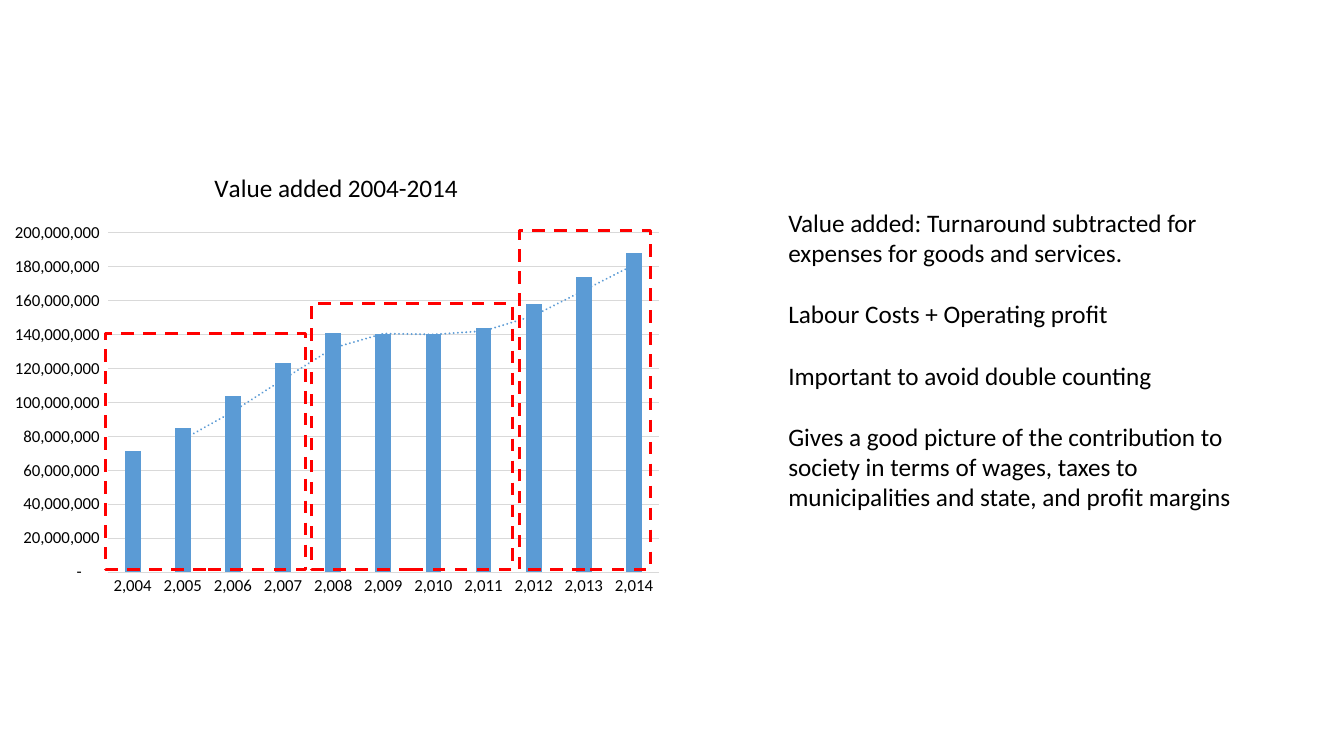
from lxml import etree
from pptx import Presentation
from pptx.chart.data import CategoryChartData
from pptx.dml.color import RGBColor
from pptx.enum import chart as ch, dml, shapes, text
from pptx.oxml.ns import qn
from pptx.util import Inches, Pt

BLACK = RGBColor(0x00, 0x00, 0x00)
WHITE = RGBColor(0xFF, 0xFF, 0xFF)
BLUE = RGBColor(0x5B, 0x9B, 0xD5)
GRID_GREY = RGBColor(0xD9, 0xD9, 0xD9)
RED = RGBColor(0xFF, 0x00, 0x00)
FONT = "Calibri"
CHART_NS = "http://schemas.openxmlformats.org/drawingml/2006/chart"
DRAWING_NS = "http://schemas.openxmlformats.org/drawingml/2006/main"

YEARS = range(2004, 2015)
VALUE_ADDED_MILLIONS = (71, 85, 104, 123, 141, 140, 140, 144, 158, 174, 188)
NUMBER_FORMAT = r'_ * #,##0_ ;_ * \-#,##0_ ;_ * "-"??_ ;_ '
PERIOD_FRAMES = (
    (1.05, 3.31, 1.98),
    (3.09, 3.01, 1.99),
    (5.15, 2.29, 1.3),
)
FRAME_BOTTOM = 5.65
EXPLANATIONS = (
    "Value added: Turnaround subtracted for expenses for goods and services.",
    "Labour Costs + Operating profit",
    "Important to avoid double counting",
    "Gives a good picture of the contribution to society in terms of wages, "
    "taxes to municipalities and state, and profit margins",
)


def format_font(font, size, color=BLACK, bold=False):
    font.name = FONT
    font.size = Pt(size)
    font.bold = bold
    font.color.rgb = color


def write_text(frame, paragraphs, size=18, color=BLACK, gap=0, align=None):
    for index, content in enumerate(paragraphs):
        paragraph = frame.add_paragraph() if index else frame.paragraphs[0]
        paragraph.alignment = align
        if index:
            paragraph.space_before = Pt(gap)
        run = paragraph.add_run()
        run.text = content
        format_font(run.font, size, color)


def format_line(line, color, width, dash=None):
    line.color.rgb = color
    line.width = Pt(width)
    if dash:
        line.dash_style = dash


def add_moving_average(series):
    trendline = etree.fromstring(
        f'<c:trendline xmlns:c="{CHART_NS}" xmlns:a="{DRAWING_NS}">'
        '<c:spPr><a:ln w="19050" cap="rnd"><a:solidFill>'
        f'<a:srgbClr val="{BLUE}"/></a:solidFill><a:prstDash val="sysDot"/>'
        '</a:ln></c:spPr><c:trendlineType val="movingAvg"/>'
        '<c:period val="2"/><c:dispRSqr val="0"/><c:dispEq val="0"/>'
        '</c:trendline>'
    )
    series._element.find(qn("c:cat")).addprevious(trendline)


def place_plot(chart, left, top, width, height):
    plot_area = chart._chartSpace.chart.plotArea
    for layout in plot_area.findall(qn("c:layout")):
        plot_area.remove(layout)
    layout = etree.Element(qn("c:layout"))
    manual = etree.SubElement(layout, qn("c:manualLayout"))
    settings = (("layoutTarget", "inner"), ("xMode", "edge"), ("yMode", "edge"),
                ("x", left), ("y", top), ("w", width), ("h", height))
    for name, value in settings:
        etree.SubElement(manual, qn(f"c:{name}")).set("val", str(value))
    plot_area.insert(0, layout)


def format_axes(chart):
    for axis in (chart.category_axis, chart.value_axis):
        axis.major_tick_mark = ch.XL_TICK_MARK.NONE
        axis.minor_tick_mark = ch.XL_TICK_MARK.NONE
        format_font(axis.tick_labels.font, 12)
    format_line(chart.category_axis.format.line, GRID_GREY, 0.75)
    value_axis = chart.value_axis
    value_axis.minimum_scale = 0
    value_axis.maximum_scale = 200_000_000
    value_axis.major_unit = 20_000_000
    value_axis.format.line.fill.background()
    format_line(value_axis.major_gridlines.format.line, GRID_GREY, 0.75)
    value_axis.tick_labels.number_format = NUMBER_FORMAT
    value_axis.tick_labels.number_format_is_linked = False


def add_value_chart(slide):
    chart_data = CategoryChartData()
    chart_data.categories = [f"{year:,}" for year in YEARS]
    chart_data.add_series(
        "Series 1", [value * 1_000_000 for value in VALUE_ADDED_MILLIONS])
    chart = slide.shapes.add_chart(
        ch.XL_CHART_TYPE.COLUMN_CLUSTERED, Inches(0), Inches(1.5),
        Inches(6.67), Inches(4.49), chart_data).chart
    format_font(chart.font, 10)
    chart.has_legend = False
    chart.has_title = True
    write_text(chart.chart_title.text_frame, ["Value added 2004-2014"])
    chart.chart_title.include_in_layout = False
    plot = chart.plots[0]
    plot.vary_by_categories = False
    plot.gap_width = 219
    plot.overlap = -27
    series = plot.series[0]
    series.format.fill.solid()
    series.format.fill.fore_color.rgb = BLUE
    add_moving_average(series)
    format_axes(chart)
    place_plot(chart, 0.16, 0.18, 0.82, 0.75)


def add_period_frame(slide, left, top, width):
    frame = slide.shapes.add_shape(
        shapes.MSO_SHAPE.RECTANGLE, Inches(left), Inches(top),
        Inches(width), Inches(FRAME_BOTTOM - top))
    frame.shadow.inherit = False
    frame.fill.background()
    format_line(frame.line, RED, 2.25, dml.MSO_LINE.DASH)


def add_explanation(slide):
    box = slide.shapes.add_textbox(
        Inches(7.72), Inches(2.01), Inches(5.03), Inches(3.13))
    box.text_frame.word_wrap = True
    box.text_frame.auto_size = text.MSO_AUTO_SIZE.SHAPE_TO_FIT_TEXT
    write_text(box.text_frame, EXPLANATIONS, gap=22, align=text.PP_ALIGN.LEFT)


def main():
    presentation = Presentation()
    presentation.slide_width = Inches(13.33)
    presentation.slide_height = Inches(7.5)
    slide = presentation.slides.add_slide(presentation.slide_layouts[6])
    slide.background.fill.solid()
    slide.background.fill.fore_color.rgb = WHITE
    add_value_chart(slide)
    for left, top, width in PERIOD_FRAMES:
        add_period_frame(slide, left, top, width)
    add_explanation(slide)
    presentation.save("out.pptx")


if __name__ == "__main__":
    main()
